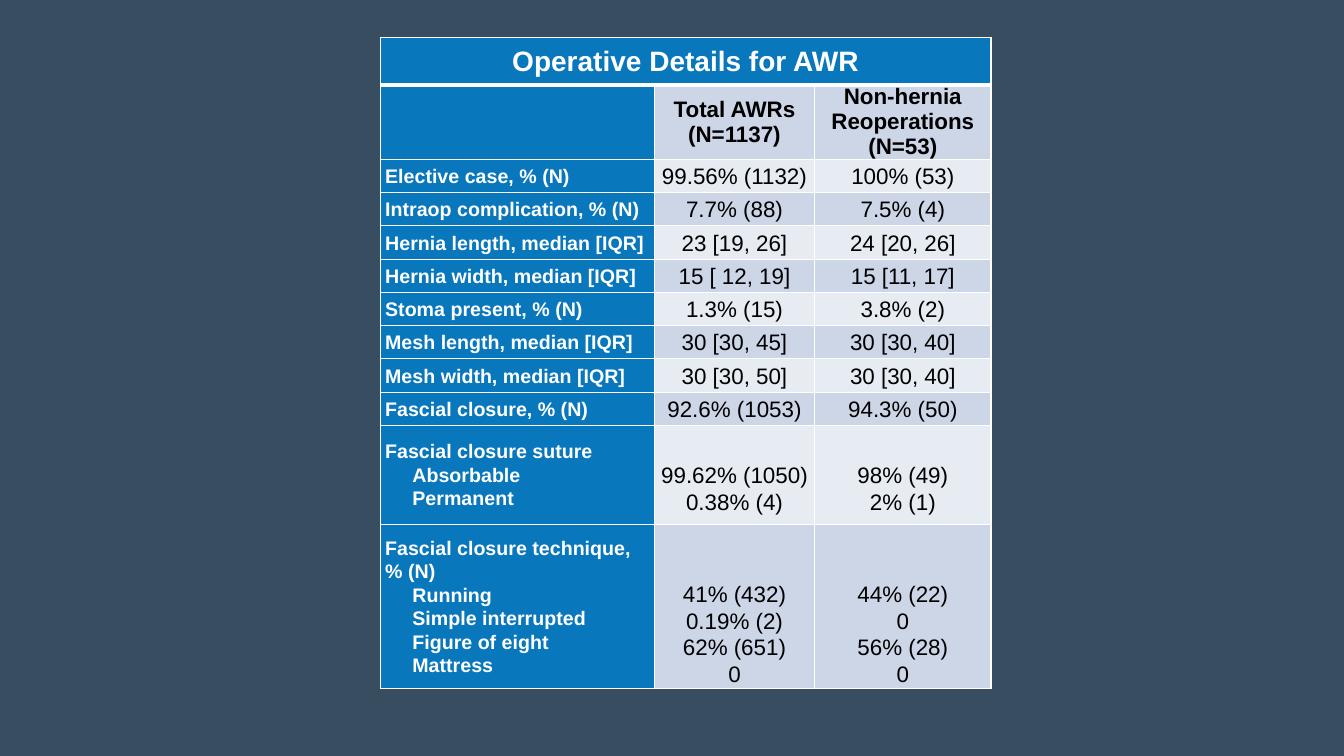
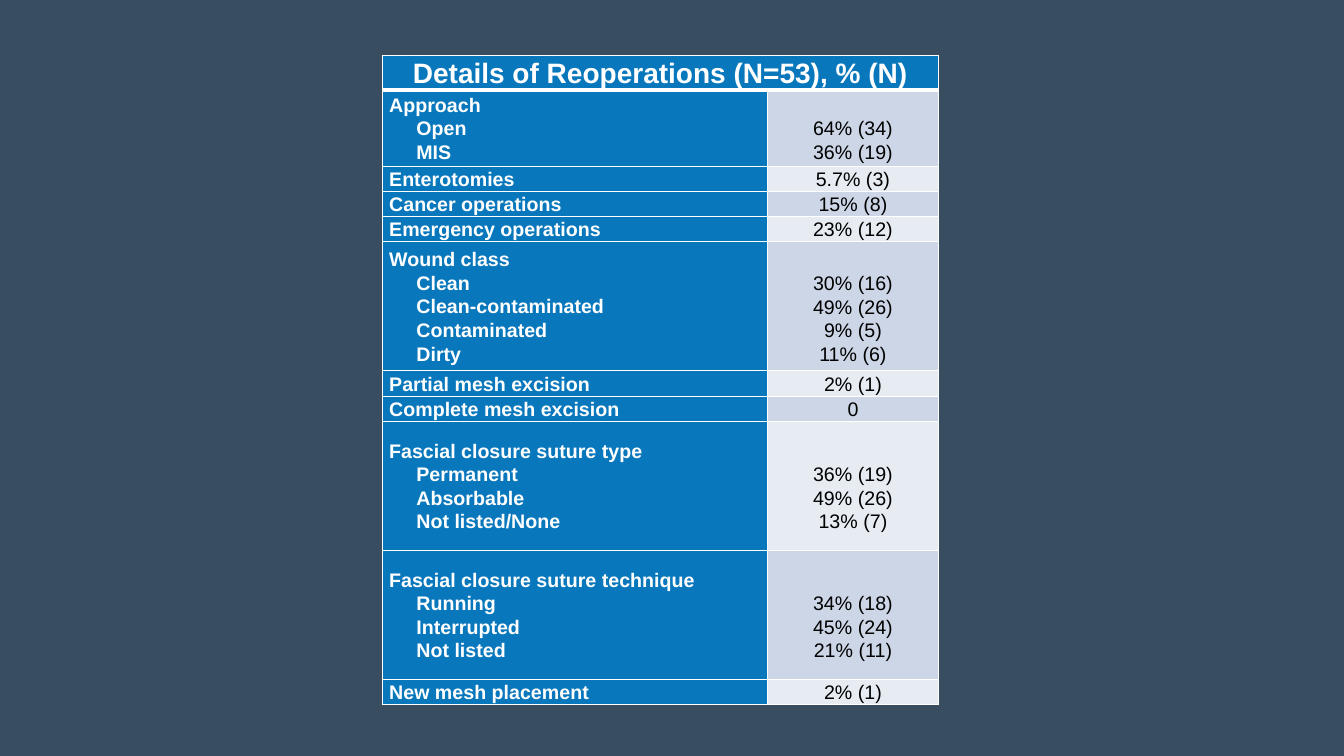
from lxml import etree
from pptx import Presentation
from pptx.dml.color import RGBColor
from pptx.enum import text as t
from pptx.oxml import ns
from pptx.util import Inches, Pt

BACKGROUND, BLUE, WHITE, BLACK = "384D60", "0877BC", "FFFFFF", "000000"
BANDS = ["E7ECF3", "CCD6E7"]
SPACING = 1.07
LINE_HEIGHT = 1.15 * SPACING / 72
SUB_INDENT = Inches(0.27)


def paint(target, color):
    target.solid()
    target.fore_color.rgb = RGBColor.from_string(color)


def write(cell, text, size=14, color=BLACK, bold=False, align=t.PP_ALIGN.CENTER,
          spacing=SPACING, indent=0):
    for number, line in enumerate(text.split("\n")):
        frame = cell.text_frame
        para = frame.paragraphs[0] if number == 0 else frame.add_paragraph()
        para.alignment = align
        para.line_spacing = spacing
        if number and indent:
            para._p.get_or_add_pPr().set("marL", str(indent))
        span = para.add_run()
        span.text = line
        span.font.name = "Arial"
        span.font.size = Pt(size)
        span.font.bold = bold
        span.font.color.rgb = RGBColor.from_string(color)


# Each row: height, heading lines above the values, label, values
operative = dict(
    title="Operative Details for AWR", title_height=0.47, left=3.77, top=0.37,
    columns=[2.72, 1.59, 1.75], inset=0.05, value_size=16,
    header=["Total AWRs (N=1137)", "Non-hernia Reoperations (N=53)"], header_height=0.72,
    rows=[
        (0.33, 0, "Elective case, % (N)", "99.56% (1132)", "100% (53)"),
        (0.33, 0, "Intraop complication, % (N)", "7.7% (88)", "7.5% (4)"),
        (0.33, 0, "Hernia length, median [IQR]", "23 [19, 26]", "24 [20, 26]"),
        (0.33, 0, "Hernia width, median [IQR]", "15 [ 12, 19]", "15 [11, 17]"),
        (0.33, 0, "Stoma present, % (N)", "1.3% (15)", "3.8% (2)"),
        (0.33, 0, "Mesh length, median [IQR]", "30 [30, 45]", "30 [30, 40]"),
        (0.33, 0, "Mesh width, median [IQR]", "30 [30, 50]", "30 [30, 40]"),
        (0.33, 0, "Fascial closure, % (N)", "92.6% (1053)", "94.3% (50)"),
        (0.98, 1, "Fascial closure suture\nAbsorbable\nPermanent",
         "99.62% (1050)\n0.38% (4)", "98% (49)\n2% (1)"),
        (1.63, 2, "Fascial closure technique, % (N)\nRunning\nSimple interrupted\n"
         "Figure of eight\nMattress",
         "41% (432)\n0.19% (2)\n62% (651)\n0", "44% (22)\n0\n56% (28)\n0"),
    ])
reoperations = dict(
    title="Details of Reoperations (N=53), % (N)", title_height=0.34, left=3.79, top=0.55,
    columns=[3.82, 1.7], inset=0.07, value_size=14, header=[], header_height=0,
    rows=[
        (0.76, 1, "Approach\nOpen\nMIS", "64% (34)\n36% (19)"),
        (0.25, 0, "Enterotomies", "5.7% (3)"),
        (0.25, 0, "Cancer operations", "15% (8)"),
        (0.25, 0, "Emergency operations", "23% (12)"),
        (1.28, 1, "Wound class\nClean\nClean-contaminated\nContaminated\nDirty",
         "30% (16)\n49% (26)\n9% (5)\n11% (6)"),
        (0.25, 0, "Partial mesh excision", "2% (1)"),
        (0.25, 0, "Complete mesh excision", "0"),
        (1.28, 1, "Fascial closure suture type\nPermanent\nAbsorbable\nNot listed/None",
         "36% (19)\n49% (26)\n13% (7)"),
        (1.28, 1, "Fascial closure suture technique\nRunning\nInterrupted\nNot listed",
         "34% (18)\n45% (24)\n21% (11)"),
        (0.25, 0, "New mesh placement", "2% (1)"),
    ])

deck = Presentation()
deck.slide_width, deck.slide_height = Inches(13.33), Inches(7.5)

for data in (operative, reoperations):
    page = deck.slides.add_slide(deck.slide_layouts[6])
    paint(page.background.fill, BACKGROUND)
    header_rows = [data["header_height"]] if data["header"] else []
    heights = [data["title_height"]] + header_rows + [row[0] for row in data["rows"]]
    first_row = 1 + len(header_rows)
    table = page.shapes.add_table(
        len(heights), len(data["columns"]), Inches(data["left"]), Inches(data["top"]),
        Inches(sum(data["columns"])), Inches(sum(heights))).table
    for column, width in zip(table.columns, data["columns"]):
        column.width = Inches(width)
    for row, height in zip(table.rows, heights):
        row.height = Inches(height)

    for row_number in range(len(heights)):
        for column_number in range(len(data["columns"])):
            cell = table.cell(row_number, column_number)
            cell.vertical_anchor = t.MSO_ANCHOR.MIDDLE
            cell.margin_left = cell.margin_right = Inches(data["inset"])
            cell.margin_top = cell.margin_bottom = 0
            is_blue = row_number == 0 or column_number == 0
            paint(cell.fill, BLUE if is_blue else BANDS[row_number % 2])
            properties = cell._tc.get_or_add_tcPr()
            for position, side in enumerate(["lnL", "lnR", "lnT", "lnB"]):
                under_title = (row_number, side) in [(0, "lnB"), (1, "lnT")]
                line = etree.Element(ns.qn("a:" + side), w=str(Pt(3 if under_title else 1)))
                solid = etree.SubElement(line, ns.qn("a:solidFill"))
                etree.SubElement(solid, ns.qn("a:srgbClr"), val=WHITE)
                properties.insert(position, line)

    table.cell(0, 0).merge(table.cell(0, len(data["columns"]) - 1))
    write(table.cell(0, 0), data["title"], size=20, color=WHITE, bold=True)
    for column_number, heading in enumerate(data["header"], 1):
        write(table.cell(1, column_number), heading, size=16, bold=True, spacing=1.0)
    for row_number, (height, lead_lines, label, *values) in enumerate(data["rows"], first_row):
        write(table.cell(row_number, 0), label, color=WHITE, bold=True,
              align=t.PP_ALIGN.LEFT, indent=SUB_INDENT)
        for column_number, value in enumerate(values, 1):
            cell = table.cell(row_number, column_number)
            cell.margin_top = Inches(lead_lines * data["value_size"] * LINE_HEIGHT)
            write(cell, value, size=data["value_size"])

deck.save("out.pptx")
